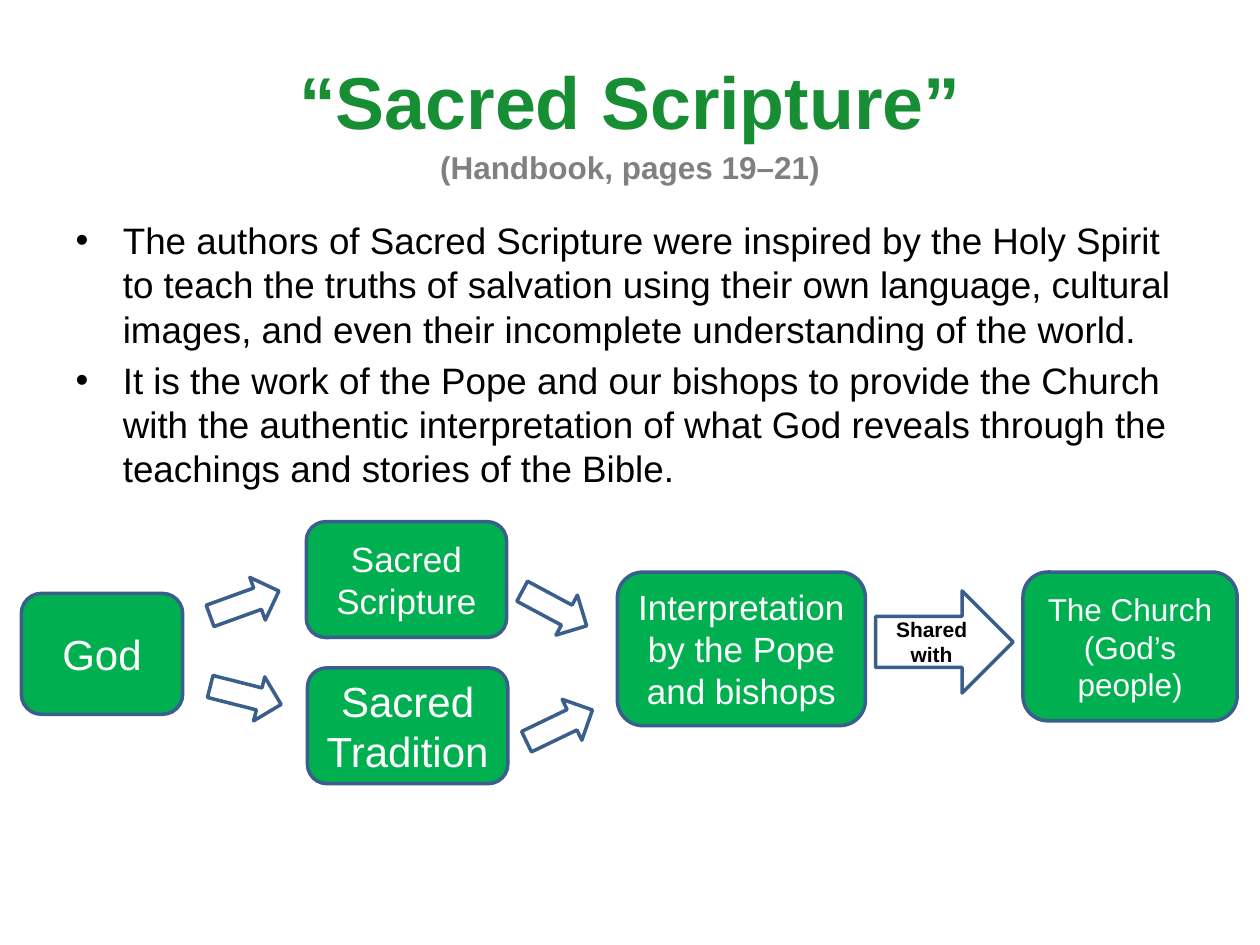
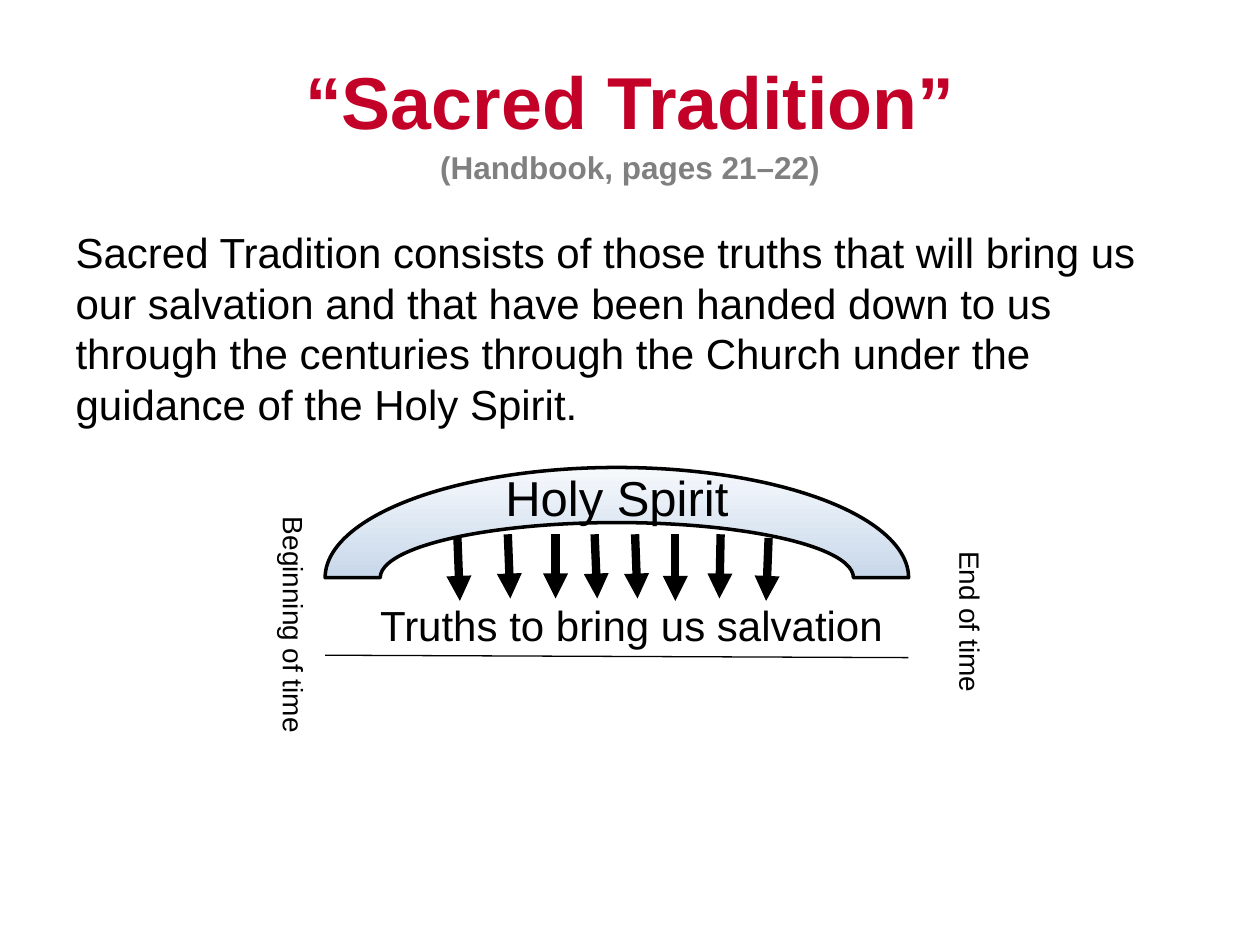
"""Build two slides on Sacred Scripture and Sacred Tradition."""
import pptx
import pptx.dml.color
import pptx.enum.shapes
import pptx.enum.text
import pptx.oxml.ns
import pptx.util
from lxml import etree

Pt = pptx.util.Pt
qn = pptx.oxml.ns.qn
SHAPE = pptx.enum.shapes.MSO_SHAPE
ALIGN = pptx.enum.text.PP_ALIGN
ANCHOR = pptx.enum.text.MSO_ANCHOR
AUTO_SIZE = pptx.enum.text.MSO_AUTO_SIZE

FONT = "Arial"
COLORS = {
    "scripture": "178D34", "tradition": "C30027", "pages": "808080",
    "text": "000000", "white": "FFFFFF", "step": "00B050", "outline": "3A5F8C",
}
TITLE_BOX = (36, 21.6, 648, 90)

SCRIPTURE = {
    "title": "“Sacred Scripture”", "pages": "(Handbook, pages 19–21)",
    "color": "scripture", "body_box": (36, 121, 648, 373.7), "size": 21, "bullets": True,
    "body": [
        "The authors of Sacred Scripture were inspired by the Holy Spirit to teach the truths "
        "of salvation using their own language, cultural images, and even their incomplete "
        "understanding of the world.",
        "It is the work of the Pope and our bishops to provide the Church with the authentic "
        "interpretation of what God reveals through the teachings and stories of the Bible.",
    ],
}
TRADITION = {
    "title": "“Sacred Tradition”", "pages": "(Handbook, pages 21–22)",
    "color": "tradition", "body_box": (36, 126, 648, 292.3), "size": 24, "bullets": False,
    "body": [
        "Sacred Tradition consists of those truths that will bring us our salvation and that "
        "have been handed down to us through the centuries through the Church under the "
        "guidance of the Holy Spirit.",
    ],
}

STEPS = [
    ("God", 24, (12.2, 339.1, 92.2, 69.1)),
    ("Sacred Scripture", 20, (175, 298.1, 114.5, 66.2)),
    ("Sacred Tradition", 24, (175.7, 381.6, 114.5, 66.2)),
    ("Interpretation by the Pope and bishops", 20, (352.8, 326.9, 141.8, 87.8)),
    ("The Church (God’s people)", 18, (584.6, 326.9, 122.4, 85)),
]
FLOW_SIZE = (41.8, 25.9)
FLOWS = [(118.8, 331.9, 340.1), (119.5, 384.5, 14.2),
         (295.9, 334.8, 28.2), (298.8, 401.8, 334.3)]
SHARED = ("Shared\nwith", (500.4, 337.7, 78.5, 58.3))

SPIRIT = ("Holy Spirit", (185.8, 267.1, 333.4, 126))
SPIRIT_GRADIENT = [(0, "F6F9FC"), (74, "B0C6E1"), (83, "B0C6E1"), (100, "CAD9EB")]
RAYS = [
    (261.4, 307.4, 262.8, 343.4), (290.2, 305.3, 291.6, 342),
    (317.5, 305.3, 317.5, 342), (339.8, 305.3, 341.3, 342),
    (362.9, 305.3, 364.3, 342), (385.9, 305.3, 385.9, 343.4),
    (439.2, 307.4, 437.8, 343.4), (411.8, 305.3, 411.1, 342),
]
TIMELINE = (185.8, 374.4, 519.1, 375.8)
LABELS = [
    ("Beginning of time", 16, 90, (95.8, 347, 144, 26.6)),
    ("End of time", 16, 90, (482.4, 366.5, 144, 26.6)),
    ("Truths to bring us salvation", 24, 0, (210.2, 339.1, 319.7, 36)),
]


def rgb(name):
    """Return the named colour."""
    return pptx.dml.color.RGBColor.from_string(COLORS[name])


def points(lengths):
    """Convert numbers to lengths in points."""
    return [Pt(length) for length in lengths]


def write(paragraph, text, *, size, color="text", bold=False, align=None):
    """Append formatted text, turning newlines into line breaks."""
    if align is not None:
        paragraph.alignment = align
    for index, line in enumerate(text.split("\n")):
        if index:
            paragraph.add_line_break()
            etree.SubElement(paragraph._p[-1], qn("a:rPr"), sz=str(size * 100))
        if line:
            run = paragraph.add_run()
            run.text = line
            run.font.name = FONT
            run.font.size = Pt(size)
            run.font.bold = bold
            run.font.color.rgb = rgb(color)


def place(placeholder, box):
    """Move a placeholder and return its text frame without autofit."""
    placeholder.left, placeholder.top, placeholder.width, placeholder.height = points(box)
    placeholder.text_frame.auto_size = AUTO_SIZE.NONE
    return placeholder.text_frame


def add_page(deck, page):
    """Add a slide with its title and body."""
    slide = deck.slides.add_slide(deck.slide_layouts[1])
    frame = place(slide.shapes.title, TITLE_BOX)
    frame.vertical_anchor = ANCHOR.MIDDLE
    heading = frame.paragraphs[0]
    heading.line_spacing = 1.1
    write(heading, page["title"] + "\n", size=42, color=page["color"], bold=True,
          align=ALIGN.CENTER)
    write(heading, page["pages"], size=18, color="pages", bold=True)

    frame = place(slide.placeholders[1], page["body_box"])
    for index, text in enumerate(page["body"]):
        paragraph = frame.add_paragraph() if index else frame.paragraphs[0]
        paragraph.space_before = Pt(4 if index else 0)
        if not page["bullets"]:
            properties = paragraph._p.get_or_add_pPr()
            properties.set("marL", "0")
            properties.set("indent", "0")
            etree.SubElement(properties, qn("a:buNone"))
        write(paragraph, text, size=page["size"])
    return slide


def add_figure(slide, kind, box, fill=None, outline="outline", rotation=0):
    """Add an outlined preset shape, unfilled unless a fill is named."""
    figure = slide.shapes.add_shape(kind, *points(box))
    figure.shadow.inherit = False
    figure.rotation = rotation
    figure.line.color.rgb = rgb(outline)
    figure.line.width = Pt(2)
    if fill:
        figure.fill.solid()
        figure.fill.fore_color.rgb = rgb(fill)
    else:
        figure.fill.background()
    figure.text_frame.vertical_anchor = ANCHOR.MIDDLE
    return figure


def add_line(slide, ends, width, arrow=False):
    """Add a straight line, with an arrowhead if wanted."""
    line = slide.shapes.add_connector(pptx.enum.shapes.MSO_CONNECTOR.STRAIGHT, *points(ends))
    line.line.color.rgb = rgb("text")
    line.line.width = Pt(width)
    properties = line._element.spPr
    if arrow:
        etree.SubElement(properties.find(qn("a:ln")), qn("a:tailEnd"), type="triangle")
    etree.SubElement(properties, qn("a:effectLst"))


def draw_scripture(slide):
    """Draw the flow from God to the Church."""
    for text, size, box in STEPS:
        step = add_figure(slide, SHAPE.ROUNDED_RECTANGLE, box, fill="step")
        write(step.text_frame.paragraphs[0], text, size=size, color="white",
              align=ALIGN.CENTER)
    for left, top, rotation in FLOWS:
        add_figure(slide, SHAPE.RIGHT_ARROW, (left, top, *FLOW_SIZE), rotation=rotation)
    text, box = SHARED
    shared = add_figure(slide, SHAPE.RIGHT_ARROW, box)
    write(shared.text_frame.paragraphs[0], text, size=12, bold=True, align=ALIGN.CENTER)


def draw_tradition(slide):
    """Draw the Holy Spirit's arc over the timeline."""
    text, box = SPIRIT
    spirit = add_figure(slide, SHAPE.BLOCK_ARC, box, outline="text")
    spirit.fill.gradient()
    spirit.fill.gradient_angle = 270
    stops = next(spirit._element.iter(qn("a:gsLst")))
    for stop in list(stops):
        stops.remove(stop)
    for position, color in SPIRIT_GRADIENT:
        stop = etree.SubElement(stops, qn("a:gs"), pos=str(position * 1000))
        etree.SubElement(stop, qn("a:srgbClr"), val=color)
    frame = spirit.text_frame
    frame.vertical_anchor = ANCHOR.TOP
    frame.margin_top = frame.margin_bottom = Pt(0)
    write(frame.paragraphs[0], text, size=28, align=ALIGN.CENTER)

    for ray in RAYS:
        add_line(slide, ray, 4.75, arrow=True)
    add_line(slide, TIMELINE, 0.75)
    for text, size, rotation, box in LABELS:
        label = slide.shapes.add_textbox(*points(box))
        label.rotation = rotation
        label.text_frame.word_wrap = True
        label.text_frame.auto_size = AUTO_SIZE.SHAPE_TO_FIT_TEXT
        write(label.text_frame.paragraphs[0], text, size=size)


def main():
    """Build and save the deck."""
    deck = pptx.Presentation()
    deck.slide_width, deck.slide_height = Pt(720), Pt(540)
    draw_scripture(add_page(deck, SCRIPTURE))
    draw_tradition(add_page(deck, TRADITION))
    deck.save("out.pptx")


if __name__ == "__main__":
    main()
